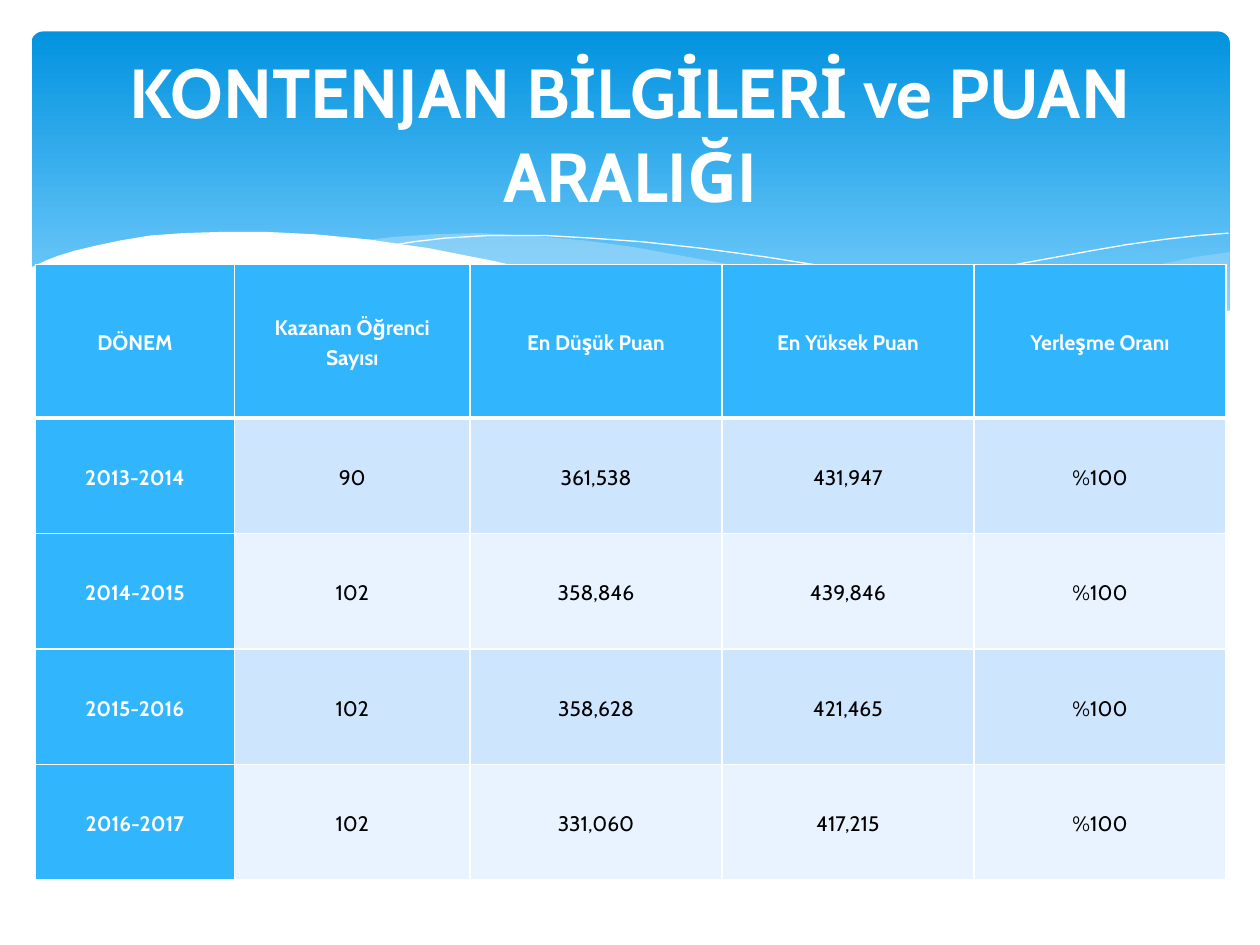
from lxml import etree
from pptx import Presentation
from pptx.dml.color import RGBColor
from pptx.enum.shapes import MSO_SHAPE
from pptx.enum.text import MSO_ANCHOR, PP_ALIGN
from pptx.oxml.ns import qn
from pptx.util import Pt

ROUND = MSO_SHAPE.ROUNDED_RECTANGLE
MIDDLE = MSO_ANCHOR.MIDDLE
CENTER = PP_ALIGN.CENTER
FONT = "Cabin"
WHITE, BLACK, BLUE, PALE = "FFFFFF", "000000", "31B6FD", "C6E7FC"
BANDS = ["CEE5FE", "E8F3FF"]
rgb = RGBColor.from_string


def write(frame, text, size=12, color=BLACK, bold=False, space=1.0):
    para = frame.paragraphs[0]
    para.text = text
    para.alignment = CENTER
    para.line_spacing = space
    font = para.runs[0].font
    for run in para.runs:
        font = run.font
        font.name, font.size, font.bold = FONT, Pt(size), bold
        font.color.rgb = rgb(color)


def wave(points, fill=None, alpha=100):
    """Draw a filled wave, or an open white hairline when there is no fill."""
    spots = [(Pt(x), Pt(y)) for x, y in points]
    pen = slide.shapes.build_freeform(*spots[0])
    pen.add_line_segments(spots[1:], close=fill is not None)
    shape = pen.convert_to_shape()
    shape.shadow.inherit = False
    if fill is None:
        shape.fill.background()
        shape.line.color.rgb = rgb(WHITE)
        shape.line.width = Pt(0)
        return
    shape.fill.solid()
    shape.fill.fore_color.rgb = rgb(fill)
    shape.line.fill.background()
    tone = shape.fill._xPr.find(".//" + qn("a:srgbClr"))
    etree.SubElement(tone, qn("a:alpha"), val=str(alpha * 1000))


deck = Presentation()
deck.slide_width, deck.slide_height = Pt(720), Pt(540)
slide = deck.slides.add_slide(deck.slide_layouts[6])

# Header band
band = slide.shapes.add_shape(ROUND, Pt(18), Pt(18), Pt(684.7), Pt(194.4))
band.adjustments[0] = 0.034
band.shadow.inherit = False
band.line.fill.background()
band.fill.gradient()
band.fill.gradient_angle = 270
for stop, color, place in zip(band.fill.gradient_stops, ["0293E0", "83D3FE"], [0, 0.9]):
    stop.color.rgb = rgb(color)
    stop.position = place

# Waves, from back to front
wave([(702.7, 144), (682.6, 146.9), (652.3, 153.4), (619.9, 160.6), (579.6, 170.6),
      (542.2, 178.6), (508.3, 185), (475.9, 190.8), (507.6, 195.1), (536.4, 198),
      (578.2, 200.2), (614.9, 198.7), (645.8, 194.4), (673.2, 188.6), (702.7, 177.8)],
     PALE, 29)
wave([(643, 196.6), (602.6, 190.8), (558, 182.9), (508.3, 172.8), (452.9, 159.8),
      (420.5, 151.9), (389.5, 146.2), (361.4, 141.1), (334.8, 137.5), (302.4, 134.6),
      (273.6, 133.2), (247.7, 133.9), (225.4, 135.4), (205.9, 137.5), (246.2, 143.3),
      (290.9, 151.9), (323.3, 159.8), (381.6, 172.8), (432.7, 183.6), (478.8, 191.5),
      (519.8, 197.3), (556.6, 199.4), (589, 200.2), (617, 199.4)],
     PALE, 40)
wave([(222.5, 140.4), (236.2, 138.2), (254.2, 136.1), (278.6, 134.6), (311.8, 134.6),
      (337.7, 136.1), (367.2, 138.2), (400.3, 141.8), (437.8, 146.9), (478.8, 153.4),
      (523.4, 162.7), (572.4, 173.5), (625.7, 187.9), (653, 195.8)])
wave([(441.4, 185), (470.2, 177.1), (500.4, 169.2), (538.6, 160.6), (580.3, 151.2),
      (623.5, 143.3), (644.4, 139.7), (665.3, 136.8), (684.7, 134.6), (702, 133.2)])
wave([(703.4, 177.1), (684, 184.3), (662.4, 190.8), (638.6, 195.1), (612, 198),
      (582.5, 199.4), (547.9, 198), (509.8, 194.4), (466.6, 188.6), (416.9, 180),
      (362.2, 167.8), (321.8, 158.4), (281.5, 149), (244.8, 141.8), (210.2, 136.8),
      (180, 133.9), (151.9, 132.5), (127.4, 132.5), (105.1, 133.2), (85.7, 134.6),
      (68.4, 137.5), (54.7, 140.4), (42.5, 143.3), (33.1, 146.2), (25.9, 149),
      (16.6, 153.4), (16.6, 236.9), (703.4, 236.9)],
     WHITE)

# Score table
rows = [
    ["DÖNEM", "Kazanan Öğrenci\vSayısı", "En Düşük Puan", "En Yüksek Puan", "Yerleşme Oranı"],
    ["2013-2014", "90", "361,538", "431,947", "%100"],
    ["2014-2015", "102", "358,846", "439,846", "%100"],
    ["2015-2016", "102", "358,628", "421,465", "%100"],
    ["2016-2017", "102", "331,060", "417,215", "%100"],
]
wide = [113.8, 134.6, 144, 144, 144]
high = [87.6] + [66] * 4
table = slide.shapes.add_table(len(rows), len(wide), Pt(20.2), Pt(151.2),
                               Pt(sum(wide)), Pt(sum(high))).table
for col, width in zip(table.columns, wide):
    col.width = Pt(width)
for row, height in zip(table.rows, high):
    row.height = Pt(height)

for r, row in enumerate(rows):
    for c, text in enumerate(row):
        cell = table.cell(r, c)
        head = r == 0 or c == 0
        cell.vertical_anchor = MIDDLE
        cell.margin_left = cell.margin_right = Pt(5)
        cell.margin_top = cell.margin_bottom = Pt(0)
        write(cell.text_frame, text, color=WHITE if head else BLACK, bold=head, space=1.15)
        props = cell._tc.get_or_add_tcPr()
        for side in "LRTB":
            thick = (r, side) in [(0, "B"), (1, "T")]
            edge = etree.SubElement(props, qn("a:ln" + side), w=str(Pt(3 if thick else 1)))
            paint = etree.SubElement(edge, qn("a:solidFill"))
            etree.SubElement(paint, qn("a:srgbClr"), val=WHITE)
        cell.fill.solid()
        cell.fill.fore_color.rgb = rgb(BLUE if head else BANDS[(r - 1) % 2])

# Title
title = slide.shapes.add_textbox(Pt(36), Pt(26.6), Pt(648), Pt(98.6)).text_frame
title.word_wrap = True
title.vertical_anchor = MIDDLE
write(title, "KONTENJAN BİLGİLERİ ve PUAN ARALIĞI", size=39.6, color=WHITE, bold=True)

deck.save("out.pptx")
